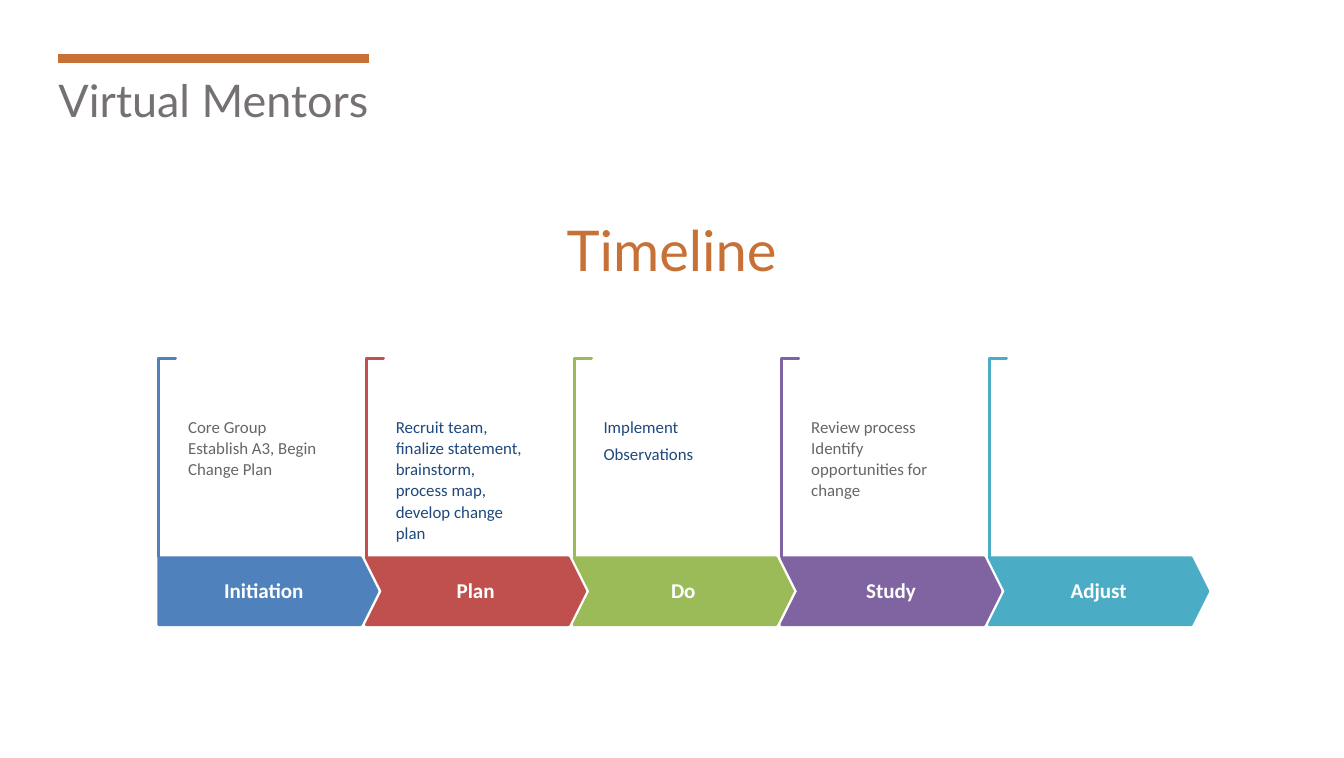
from dataclasses import dataclass

from lxml import etree
from pptx import Presentation
from pptx import util as u
from pptx.dml.color import RGBColor
from pptx.enum import shapes, text
from pptx.oxml import ns


@dataclass(frozen=True)
class Theme:
    """Colours, fonts and type sizes of the slide."""
    accent: str = "C87137"
    title: str = "767171"
    white: str = "FFFFFF"
    grey: str = "666666"
    navy: str = "1F497D"
    heading_font: str = "Lato"
    body_font: str = "Calibri"
    title_size: int = 32
    heading_size: int = 40
    label_size: int = 15
    body_size: int = 12


@dataclass(frozen=True)
class Box:
    """A rectangle measured in centimetres."""
    left: float
    top: float
    width: float
    height: float

    def lengths(self):
        """Return the four measures as lengths."""
        return [u.Cm(n) for n in (self.left, self.top, self.width, self.height)]


THEME = Theme()
STEPS = [
    ("Initiation", "4F81BD", THEME.grey, 0,
     ["Core Group", "Establish A3, Begin Change Plan"]),
    ("Plan", "C0504D", THEME.navy, 4.2,
     ["Recruit team, finalize statement, brainstorm, process map, develop change plan"]),
    ("Do", "9BBB59", THEME.navy, 4.2, ["Implement", "Observations"]),
    ("Study", "8064A2", THEME.grey, 0,
     ["Review process", "Identify opportunities for change"]),
    ("Adjust", "4BACC6", THEME.grey, 0, []),
]


def write(frame, lines, *, size, color, font=THEME.body_font, bold=False,
          align=text.PP_ALIGN.LEFT, anchor=text.MSO_ANCHOR.TOP,
          insets=(0.25, 0.13, 0.25, 0.13), spacing=None, after=0):
    """Fill a text frame with one formatted paragraph per line."""
    frame.word_wrap = True
    frame.auto_size = text.MSO_AUTO_SIZE.NONE
    frame.vertical_anchor = anchor
    (frame.margin_left, frame.margin_top,
     frame.margin_right, frame.margin_bottom) = [u.Cm(n) for n in insets]
    for index, line in enumerate(lines):
        para = frame.add_paragraph() if index else frame.paragraphs[0]
        para.alignment = align
        para.space_before = u.Pt(0)
        para.space_after = u.Pt(after)
        para.line_spacing = spacing
        span = para.add_run()
        span.text = line
        span.font.name = font
        span.font.size = u.Pt(size)
        span.font.bold = bold
        span.font.color.rgb = RGBColor.from_string(color)


def add_outlined(page, kind, box, adjustments, fill, line):
    """Add a flat preset shape with a coloured outline."""
    shape = page.shapes.add_shape(kind, *box.lengths())
    shape.shadow.inherit = False
    for index, value in enumerate(adjustments):
        shape.adjustments[index] = value
    shape.fill.solid()
    shape.fill.fore_color.rgb = RGBColor.from_string(fill)
    shape.line.color.rgb = RGBColor.from_string(line)
    shape.line.width = u.Pt(2)
    return shape


def add_title(page, box):
    """Place the slide title under its accent line."""
    title = page.shapes.title
    title.left, title.top, title.width, title.height = box.lengths()
    write(title.text_frame, ["Virtual Mentors"], size=THEME.title_size,
          color=THEME.title, font=THEME.heading_font)
    start, level = box.left + 0.23, box.top - 0.23
    rule = page.shapes.add_connector(
        shapes.MSO_CONNECTOR.STRAIGHT, u.Cm(start), u.Cm(level),
        u.Cm(start + 7.82), u.Cm(level))
    rule.line.color.rgb = RGBColor.from_string(THEME.accent)
    rule.line.width = u.Pt(6)
    etree.SubElement(rule._element.spPr, ns.qn("a:effectLst"))


def add_heading(page, box):
    """Place the centred heading."""
    frame = page.shapes.add_textbox(*box.lengths()).text_frame
    write(frame, ["Timeline"], size=THEME.heading_size, color=THEME.accent,
          font=THEME.heading_font, align=text.PP_ALIGN.CENTER)


def add_step(page, box, kind, label, color, ink, after, notes):
    """Draw one step: bracket, arrow with label, and notes."""
    arrow_height, bracket_length, bracket_depth = 1.68, 5.0, 0.43
    bracket_box = Box(box.left + (bracket_depth - bracket_length) / 2,
                      box.top + (bracket_length - bracket_depth) / 2,
                      bracket_length, bracket_depth)
    bracket = add_outlined(page, shapes.MSO_SHAPE.CORNER, bracket_box,
                           [0.01, 0.01], THEME.white, color)
    bracket.rotation = 90
    arrow_box = Box(box.left, box.top + box.height - arrow_height,
                    box.width, arrow_height)
    arrow = add_outlined(page, kind, arrow_box, [0.25], color, color)
    write(arrow.text_frame, [label], size=THEME.label_size, color=THEME.white,
          bold=True, align=text.PP_ALIGN.CENTER, anchor=text.MSO_ANCHOR.MIDDLE,
          insets=(0.25, 0.53, 0.25, 0.53), spacing=0.9)
    if notes:
        notes_box = Box(box.left + 0.44, box.top + 0.27, 4.47, 3.48)
        frame = page.shapes.add_textbox(*notes_box.lengths()).text_frame
        write(frame, notes, size=THEME.body_size, color=ink,
              insets=(0.3, 1.19, 0.79, 0), spacing=u.Pt(15), after=after)


def add_timeline(page, box):
    """Spread the steps evenly across the box."""
    step_width = 5.49
    pitch = (box.width - step_width) / (len(STEPS) - 1)
    for index, step in enumerate(STEPS):
        kind = shapes.MSO_SHAPE.CHEVRON if index else shapes.MSO_SHAPE.PENTAGON
        step_box = Box(box.left + index * pitch, box.top, step_width, box.height)
        add_step(page, step_box, kind, *step)


def main():
    """Build and save the deck."""
    deck = Presentation()
    deck.slide_width, deck.slide_height = u.Cm(33.78), u.Cm(19.05)
    page = deck.slides.add_slide(deck.slide_layouts[5])
    add_heading(page, Box(2.49, 5.28, 28.78, 1.96))
    add_timeline(page, Box(3.99, 9.0, 26.37, 6.7))
    add_title(page, Box(1.22, 1.7, 8.46, 1.63))
    deck.save("out.pptx")


if __name__ == "__main__":
    main()
